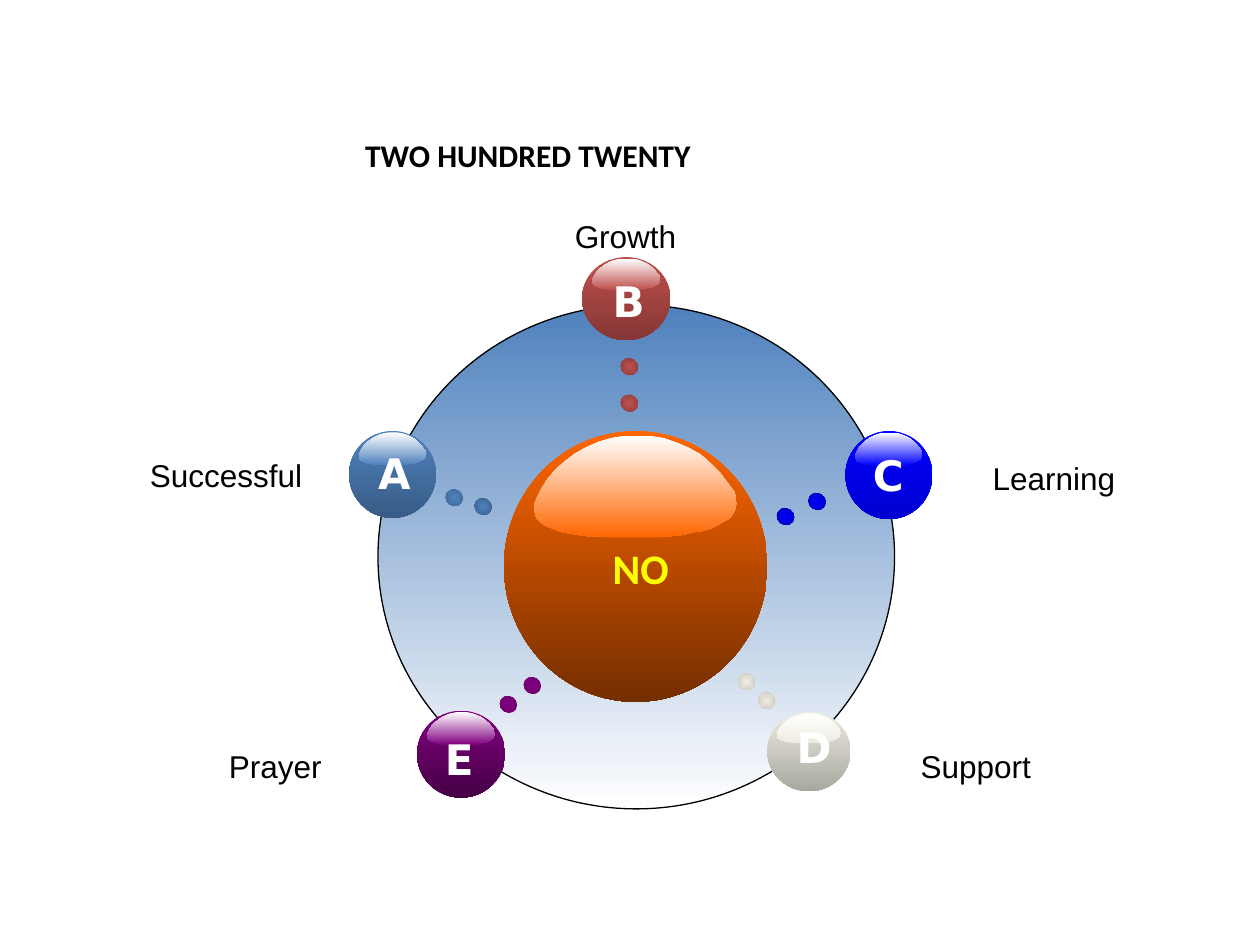
from lxml import etree
from pptx import Presentation
from pptx import util as u
from pptx.dml.color import RGBColor
from pptx.enum import shapes, text
from pptx.oxml import ns

PX = 9144
GLOSS_SIZE = (161, 81)
GLOSS = [
    (159, 45), (160, 50), (161, 54), (160, 58), (158, 62), (155, 66), (151, 68), (146, 71),
    (140, 74), (133, 76), (126, 77), (118, 79), (109, 80), (100, 81), (97, 81), (58, 81),
    (50, 80), (42, 80), (35, 79), (29, 78), (23, 77), (17, 75), (12, 73), (8, 71),
    (5, 69), (2, 66), (1, 63), (0, 59), (0, 55), (2, 50), (6, 42), (11, 34),
    (18, 26), (25, 20), (33, 14), (42, 9), (51, 5), (61, 2), (71, 0), (81, 0),
    (92, 0), (103, 2), (114, 6), (123, 10), (132, 15), (140, 22), (147, 29), (153, 37),
]
LETTER = {"name": "DejaVu Sans", "size": u.Pt(24), "bold": True}
CENTRE = {"name": "Calibri", "size": u.Pt(24), "bold": True}
LABEL = {"name": "Arial", "size": u.Pt(18), "bold": False}
TITLE = {"name": "Calibri", "size": u.Pt(18), "bold": True}


def rgb(colour):
    return RGBColor.from_string(colour)


class Diagram:
    def __init__(self, slide):
        self.shapes = slide.shapes

    def shade(self, shape, top, bottom, radial=False):
        shape.shadow.inherit = False
        shape.line.fill.background()
        fill = shape.fill
        fill.gradient()
        fill.gradient_angle = 270
        for stop, colour in zip(fill.gradient_stops, (top, bottom)):
            stop.color.rgb = rgb(colour)
        if radial:
            linear = shape._element.find(".//" + ns.qn("a:lin"))
            radiate = etree.Element(ns.qn("a:path"), {"path": "shape"})
            etree.SubElement(radiate, ns.qn("a:fillToRect"), dict.fromkeys("ltrb", "50000"))
            linear.getparent().replace(linear, radiate)

    def circle(self, box, top, bottom, radial=False):
        circle = self.shapes.add_shape(shapes.MSO_SHAPE.OVAL, *(v * PX for v in box))
        self.shade(circle, top, bottom, radial)
        return circle

    def ball(self, box, colour, dark):
        left, top, width, height = box
        self.circle(box, colour, dark)
        scale = (0.77 * width * PX / GLOSS_SIZE[0], 0.375 * height * PX / GLOSS_SIZE[1])
        outline = self.shapes.build_freeform(*GLOSS[0], scale=scale)
        outline.add_line_segments(GLOSS[1:], close=True)
        gloss = outline.convert_to_shape(
            round((left + 0.115 * width) * PX), round((top + 0.018 * height) * PX))
        self.shade(gloss, "FFFFFF", colour)

    def dot(self, left, top, colour, dark):
        self.circle((left, top, 13, 14), colour, dark, radial=True).rotation = 303.8

    def letter_in(self, shape, words, style, colour, wrap, align):
        frame = shape.text_frame
        layout = {"word_wrap": wrap, "auto_size": text.MSO_AUTO_SIZE.SHAPE_TO_FIT_TEXT,
                  "vertical_anchor": text.MSO_ANCHOR.TOP}
        for key, value in layout.items():
            setattr(frame, key, value)
        paragraph = frame.paragraphs[0]
        paragraph.alignment = align
        run = paragraph.add_run()
        run.text = words
        for key, value in style.items():
            setattr(run.font, key, value)
        run.font.color.rgb = rgb(colour)

    def caption(self, box, words, style, colour, wrap=False):
        caption = self.shapes.add_textbox(*(v * PX for v in box))
        self.letter_in(caption, words, style, colour, wrap, text.PP_ALIGN.CENTER)

    def title(self, box, words):
        banner = self.shapes.add_shape(shapes.MSO_SHAPE.RECTANGLE, *(v * PX for v in box))
        banner.shadow.inherit = False
        banner.fill.solid()
        banner.fill.fore_color.rgb = rgb("FFFFFF")
        banner.line.fill.background()
        self.letter_in(banner, words, TITLE, "000000", True, text.PP_ALIGN.LEFT)


SATELLITES = [
    ("B", (462, 204, 70, 66), (476, 214, 46, 50), "C0504D", "843735",
     [(493, 284, "883937"), (493, 313, "8C3A38")], "Growth", (400, 167)),
    ("E", (331, 564, 70, 69), (343, 577, 43, 50), "800080", "450045",
     [(397, 552, "6B006B"), (416, 537, "6B006B")], "Prayer", (122, 588)),
    ("C", (671, 342, 69, 70), (683, 352, 44, 50), "0000FF", "0000D0",
     [(642, 391, "0000B3"), (617, 403, "0000B3")], "Learning", (740, 359)),
    ("D", (609, 565, 66, 63), (622, 568, 48, 50), "EEECE1", "A9A8A0",
     [(602, 549, "C8C6BD"), (586, 534, "C8C6BD")], "Support", (678, 588)),
    ("A", (277, 342, 69, 69), (290, 350, 46, 50), "4F81BD", "385C86",
     [(354, 388, "3E6695"), (377, 395, "3A5E8A")], "Successful", (83, 357)),
]


def main():
    deck = Presentation()
    deck.slide_width, deck.slide_height = 1000 * PX, 750 * PX
    diagram = Diagram(deck.slides.add_slide(deck.slide_layouts[6]))

    ring = diagram.circle((300, 242, 410, 400), "4F81BD", "FFFFFF")
    ring.line.color.rgb = rgb("000000")
    ring.line.width = u.Pt(0.75)
    diagram.ball((400, 342, 209, 215), "FF6600", "742E00")
    diagram.caption((473, 426, 71, 50), "NO", CENTRE, "FFFF00")

    for letter, ball, letter_box, colour, dark, dots, label, corner in SATELLITES:
        diagram.ball(ball, colour, dark)
        diagram.caption(letter_box, letter, LETTER, "FFFFFF")
        for left, top, edge in dots:
            diagram.dot(left, top, colour, edge)
        diagram.caption((*corner, 193, 40), label, LABEL, "000000", wrap=True)

    diagram.title((280, 103, 670, 40), "TWO HUNDRED TWENTY")
    deck.save("out.pptx")


if __name__ == "__main__":
    main()
